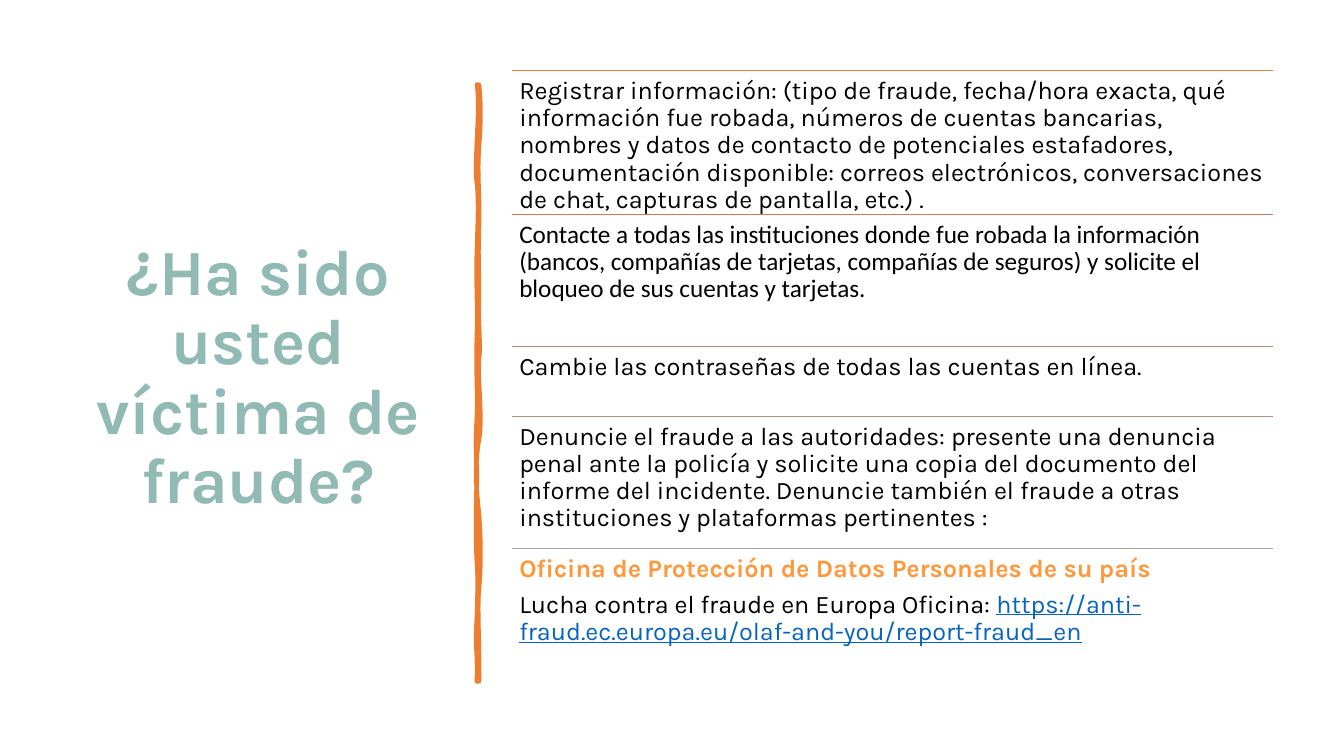
from itertools import chain

from lxml import etree
from pptx import Presentation
from pptx.dml.color import RGBColor
from pptx.enum.shapes import MSO_CONNECTOR
from pptx.enum.text import MSO_ANCHOR as ANCHOR, MSO_AUTO_SIZE as AUTOSIZE, PP_ALIGN as ALIGN
from pptx.oxml.ns import qn
from pptx.util import Inches, Pt

TITLE = "¿Ha sido usted víctima de fraude?"
BLACK, ORANGE, TEAL, LINK = "000000", "ED7D31", "92BAB5", "0563C1"
PLAIN = {"size": Pt(18), "name": "Karla", "bold": False, "color": BLACK}
CALIBRI = {**PLAIN, "name": "Calibri"}
HEADING = {**PLAIN, "bold": True, "color": "FF983B"}
URL = {**PLAIN, "underline": True, "color": LINK}
TITLE_FONT = {"size": Pt(46), "name": "Karla", "bold": True, "color": TEAL}

# Steps: top, rule colour, paragraphs of (text, font) runs
STEPS = [
    (0.7, ORANGE, [[(
        "Registrar información: (tipo de fraude, fecha/hora exacta, qué información fue robada, "
        "números de cuentas bancarias, nombres y datos de contacto de potenciales estafadores, "
        "documentación disponible: correos electrónicos, conversaciones de chat, "
        "capturas de pantalla, etc.) .", PLAIN)]]),
    (2.13, "D87A51", [[(
        "Contacte a todas las instituciones donde fue robada la información (bancos, compañías "
        "de tarjetas, compañías de seguros) y solicite el \nbloqueo de sus cuentas y tarjetas.",
        CALIBRI)]]),
    (3.44, "C48170", [[("Cambie las contraseñas de todas las cuentas en línea.", PLAIN)]]),
    (4.13, "B4908B", [[(
        "Denuncie el fraude a las autoridades: presente una denuncia penal ante la policía y "
        "solicite una copia del documento del informe del incidente. Denuncie también el fraude "
        "a otras instituciones y plataformas pertinentes :", PLAIN)]]),
    (5.44, "A5A5A5", [
        [("Oficina de Protección de Datos Personales de su país", HEADING)],
        [("Lucha contra el fraude en Europa Oficina: ", PLAIN),
         ("https://anti-fraud.ec.europa.eu/olaf-and-you/report-fraud_en", URL)]]),
]
STEPS_LEFT, STEPS_RIGHT, STEPS_BOTTOM = 5.08, 12.63, 6.75

# Hand-drawn divider: a start point, then curves (control, control, end)
BRUSH_START = (4.75, 0.84)
BRUSH_CURVES = [
    ((4.77, 1.02), (4.77, 1.19), (4.75, 1.46)), ((4.73, 1.73), (4.76, 1.95), (4.75, 2.26)),
    ((4.74, 2.57), (4.75, 2.62), (4.75, 2.94)), ((4.74, 3.25), (4.77, 3.42), (4.75, 3.56)),
    ((4.73, 3.7), (4.79, 4.14), (4.75, 4.36)), ((4.71, 4.57), (4.72, 4.84), (4.75, 5.1)),
    ((4.77, 5.36), (4.77, 5.64), (4.75, 5.84)), ((4.73, 6.03), (4.76, 6.5), (4.75, 6.76)),
    ((4.74, 6.76), (4.73, 6.76), (4.73, 6.76)), ((4.74, 6.46), (4.71, 6.44), (4.73, 6.13)),
    ((4.74, 5.83), (4.74, 5.7), (4.73, 5.57)), ((4.72, 5.44), (4.72, 4.95), (4.73, 4.77)),
    ((4.73, 4.59), (4.71, 4.45), (4.73, 4.15)), ((4.74, 3.86), (4.72, 3.73), (4.73, 3.35)),
    ((4.74, 2.98), (4.72, 2.81), (4.73, 2.5)), ((4.74, 2.18), (4.75, 2), (4.73, 1.81)),
    ((4.7, 1.63), (4.77, 1.04), (4.73, 0.84)),
]


def rgb(hex_color):
    return RGBColor.from_string(hex_color)


def set_attrs(obj, **values):
    for name, value in values.items():
        setattr(obj, name, value)


def add_run(p, text, font):
    """Add text in one font, with a line break at each newline."""
    for i, line in enumerate(text.split("\n")):
        if i:
            p.add_line_break()
        r = p.add_run()
        r.text = line
        for name, value in font.items():
            if name == "color":
                r.font.color.rgb = rgb(value)
            else:
                setattr(r.font, name, value)


def add_title(s):
    sp = s.shapes.title
    set_attrs(sp, left=Inches(0.69), top=Inches(0.7), width=Inches(3.74), height=Inches(6.11))
    tf = sp.text_frame
    set_attrs(tf, word_wrap=True, auto_size=AUTOSIZE.NONE, vertical_anchor=ANCHOR.MIDDLE)
    p = tf.paragraphs[0]
    set_attrs(p, alignment=ALIGN.CENTER, line_spacing=0.9, space_after=Pt(6))
    add_run(p, TITLE, TITLE_FONT)


def bend_segments(sp):
    """Turn each three straight segments into one cubic curve."""
    segments = list(sp._element.iter(qn("a:lnTo")))
    for i in range(0, len(segments), 3):
        curve = etree.Element(qn("a:cubicBezTo"))
        segments[i].addprevious(curve)
        for segment in segments[i:i + 3]:
            curve.append(segment[0])
            segment.getparent().remove(segment)


def add_brush(s):
    builder = s.shapes.build_freeform(*map(Inches, BRUSH_START))
    points = [(Inches(x), Inches(y)) for x, y in chain.from_iterable(BRUSH_CURVES)]
    builder.add_line_segments(points, close=True)
    sp = builder.convert_to_shape()
    bend_segments(sp)
    sp.shadow.inherit = False
    sp.fill.solid()
    sp.fill.fore_color.rgb = rgb(ORANGE)
    sp.line.color.rgb = rgb(ORANGE)
    sp.line.width = Pt(3.25)


def add_step(s, top, bottom, color, paragraphs):
    left, right, y = Inches(STEPS_LEFT), Inches(STEPS_RIGHT), Inches(top)
    rule = s.shapes.add_connector(MSO_CONNECTOR.STRAIGHT, left, y, right, y)
    rule.line.color.rgb = rgb(color)
    rule.line.width = Pt(1)
    etree.SubElement(rule._element.spPr, qn("a:effectLst"))

    tf = s.shapes.add_textbox(left, y, right - left, Inches(bottom - top)).text_frame
    inset = Inches(0.07)
    set_attrs(tf, word_wrap=True, vertical_anchor=ANCHOR.TOP, margin_left=inset,
              margin_top=inset, margin_right=inset, margin_bottom=inset)
    for i, runs in enumerate(paragraphs):
        p = tf.add_paragraph() if i else tf.paragraphs[0]
        set_attrs(p, line_spacing=0.9, space_after=Pt(6.3))
        for text, font in runs:
            add_run(p, text, font)


def main():
    prs = Presentation()
    prs.slide_width, prs.slide_height = Inches(13.33), Inches(7.5)
    s = prs.slides.add_slide(prs.slide_layouts[5])
    add_title(s)
    add_brush(s)
    bottoms = [step[0] for step in STEPS[1:]] + [STEPS_BOTTOM]
    for (top, color, paragraphs), bottom in zip(STEPS, bottoms):
        add_step(s, top, bottom, color, paragraphs)
    prs.save("out.pptx")


if __name__ == "__main__":
    main()
